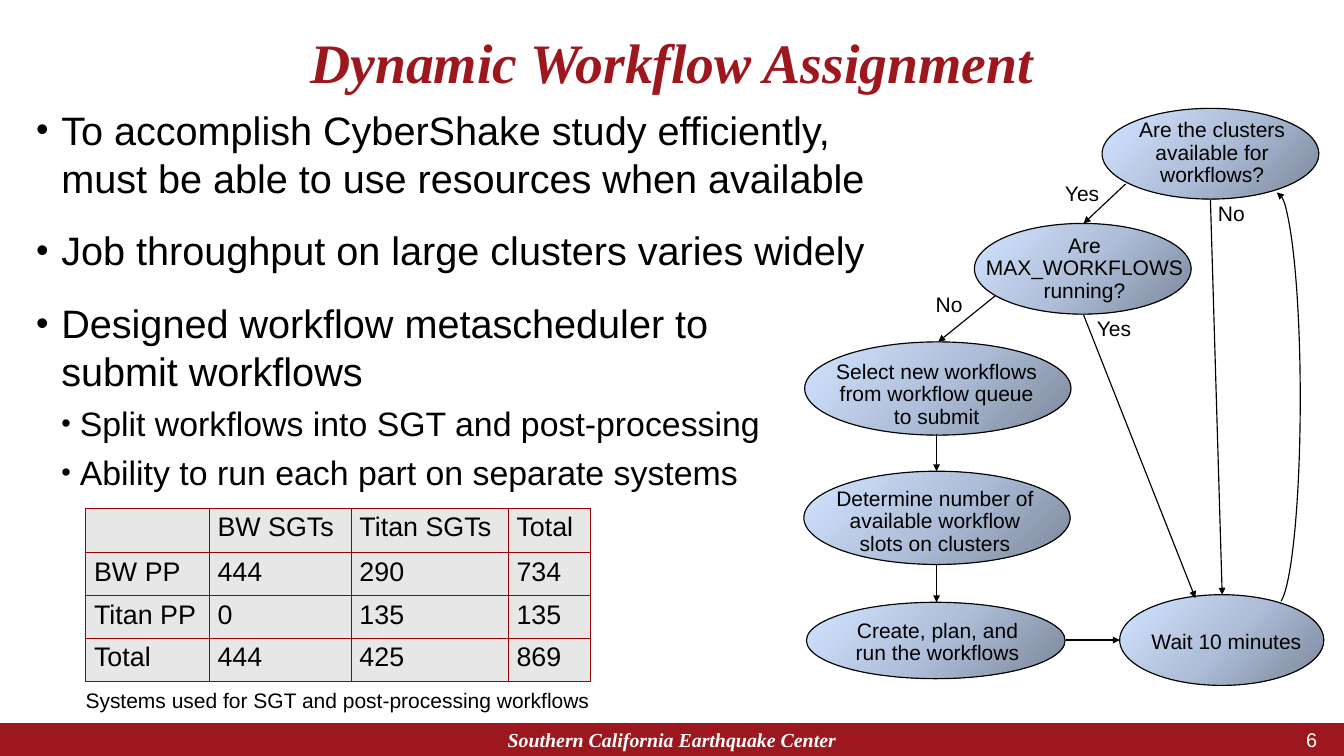
from lxml.etree import SubElement
from pptx import Presentation
from pptx.dml.color import RGBColor
from pptx.enum.shapes import MSO_CONNECTOR, MSO_SHAPE
from pptx.enum.text import MSO_ANCHOR, PP_ALIGN
from pptx.oxml import parse_xml
from pptx.oxml.ns import nsdecls, qn
from pptx.util import Inches, Pt

# Content; places are columns and rows of a 16 by 9 grid
COLUMNS, ROWS = 16, 9
COLORS = {"red": "9D171E", "black": "000000", "white": "FFFFFF",
          "cell": "E7E7E7", "border": "990000"}
GRADIENT = [(0, "7B8699"), (50, "AFBFDA"), (100, "D2E4FF")]
TITLE = "Dynamic Workflow Assignment"
BULLETS = [
    (0, "To accomplish CyberShake study efficiently, must be able to use resources when available"),
    (0, "Job throughput on large clusters varies widely"),
    (0, "Designed workflow metascheduler to\vsubmit workflows"),
    (1, "Split workflows into SGT and post-processing"),
    (1, "Ability to run each part on separate systems"),
]
# Bullet level: size, space before, left margin, hanging indent, bullet percent
LEVELS = [(34, 21.6, 0.31, 0.3, 90), (29, 7.2, 0.53, 0.22, 80)]
# Flow step: ellipse, label box, label
STEPS = [
    ((13.12, 1.29, 2.58, 1.08), (13.1, 1.37, 2.66, 0.92), "Are the clusters available for workflows?"),
    ((11.6, 2.66, 2.58, 1.08), (11.58, 2.75, 2.66, 0.92), "Are MAX_WORKFLOWS running?"),
    ((9.58, 4.07, 3.17, 1.11), (9.83, 4.25, 2.64, 0.92), "Select new workflows from workflow queue to submit"),
    ((9.57, 5.61, 3.17, 1.11), (9.81, 5.76, 2.64, 0.92), "Determine number of available workflow slots on clusters"),
    ((9.6, 7.17, 3.08, 0.91), (10, 7.33, 2.32, 0.65), "Create, plan, and run the workflows"),
    ((13.33, 7.08, 2.43, 1.08), (13.6, 7.47, 2, 0.37), "Wait 10 minutes"),
]
ARROWS = [
    (13.4, 2.19, 12.9, 2.66), (14.41, 2.38, 14.55, 7.08),
    (11.85, 3.52, 11.17, 4.07), (12.9, 3.75, 14.23, 7.12),
    (11.15, 5.17, 11.15, 5.61), (11.15, 6.73, 11.15, 7.17),
    (12.69, 7.62, 13.33, 7.62),
]
RETURN_ARC = (14.92, 2.29, 0.56, 4.91)
ANSWERS = [(12.58, 2.13, "Yes"), (14.4, 2.37, "No"),
           (11.04, 3.46, "No"), (12.96, 3.74, "Yes")]
TABLE_ROWS = [
    ("", "BW SGTs", "Titan SGTs", "Total"),
    ("BW PP", "444", "290", "734"),
    ("Titan PP", "0", "135", "135"),
    ("Total", "444", "425", "869"),
]
TABLE_WIDTHS = [1.47, 1.69, 1.87, 0.98]
TABLE_HEIGHTS = [0.53, 0.51, 0.51, 0.51]
CAPTION = "Systems used for SGT and post-processing workflows"

presentation = Presentation()
presentation.slide_width, presentation.slide_height = Inches(COLUMNS), Inches(ROWS)
slide = presentation.slides.add_slide(presentation.slide_layouts[6])
shapes = slide.shapes


def place(box):
    return [Inches(value) for value in box]


def color(name):
    return RGBColor.from_string(COLORS[name])


def style(paragraph, size, ink="black", name="Arial", strong=False):
    for run in paragraph.runs:
        font = run.font
        font.size, font.name = Pt(size), name
        font.bold = font.italic = strong
        font.color.rgb = color(ink)


def add_text(box, text, size=18, align=PP_ALIGN.LEFT, spacing=0.9,
             anchor=MSO_ANCHOR.TOP, margins=(0.1, 0.05), **look):
    frame = shapes.add_textbox(*place(box)).text_frame
    frame.word_wrap = True
    frame.vertical_anchor = anchor
    frame.margin_left = frame.margin_right = Inches(margins[0])
    frame.margin_top = frame.margin_bottom = Inches(margins[1])
    frame.text = text
    for paragraph in frame.paragraphs:
        paragraph.alignment, paragraph.line_spacing = align, spacing
        style(paragraph, size, **look)
    return frame


def add_outline(shape, arrow_end=None):
    shape.line.color.rgb = color("black")
    shape.line.width = Pt(1)
    if arrow_end:
        SubElement(shape.line._get_or_add_ln(), qn(f"a:{arrow_end}"), type="triangle")


def add_ellipse(box):
    ellipse = shapes.add_shape(MSO_SHAPE.OVAL, *place(box))
    add_outline(ellipse)
    ellipse.shadow.inherit = False
    stops = "".join(f'<a:gs pos="{share * 1000}"><a:srgbClr val="{shade}"/></a:gs>'
                    for share, shade in GRADIENT)
    gradient = parse_xml(
        f'<a:gradFill {nsdecls("a")} rotWithShape="1"><a:gsLst>{stops}</a:gsLst>'
        '<a:path path="circle"><a:fillToRect l="100000" t="100000"/></a:path></a:gradFill>')
    ellipse._element.spPr.find(qn("a:prstGeom")).addnext(gradient)


# Title and footer
wide = (0.12, 0.06)
serif = {"name": "Times New Roman", "strong": True}
footer = shapes.add_shape(MSO_SHAPE.RECTANGLE, *place((0, 8.61, COLUMNS, 0.39)))
footer.shadow.inherit = False
footer.fill.solid()
footer.fill.fore_color.rgb = color("red")
footer.line.fill.background()
add_text((0.4, 0.36, 15.2, 0.84), TITLE, 47.7, PP_ALIGN.CENTER,
         margins=wide, ink="red", **serif)
add_text((5.3, 8.57, 5.4, 0.48), "Southern California Earthquake Center", 17,
         PP_ALIGN.CENTER, 1, MSO_ANCHOR.MIDDLE, wide, ink="white", **serif)
add_text((14.3, 8.69, 1.5, 0.24), "6", 17, PP_ALIGN.RIGHT, 1,
         MSO_ANCHOR.MIDDLE, wide, ink="white")

# Bullets
body = add_text((0.3, 1.2, 10.22, 7.1), "", spacing=1, margins=wide)
for index, (level, text) in enumerate(BULLETS):
    size, before, left, hanging, percent = LEVELS[level]
    paragraph = body.add_paragraph() if index else body.paragraphs[0]
    paragraph.text = text
    paragraph.level = level
    paragraph.space_before = Pt(before if index else 0)
    properties = paragraph._p.get_or_add_pPr()
    properties.set("marL", str(Inches(left)))
    properties.set("indent", str(-Inches(hanging)))
    bullet_color = SubElement(properties, qn("a:buClr"))
    SubElement(bullet_color, qn("a:srgbClr"), val=COLORS["black"])
    SubElement(properties, qn("a:buSzPct"), val=str(percent * 1000))
    SubElement(properties, qn("a:buFont"), typeface="Arial")
    SubElement(properties, qn("a:buChar"), char="•")
    style(paragraph, size)

# Flow chart
for ellipse_box, label_box, label in STEPS:
    add_ellipse(ellipse_box)
    add_text(label_box, label, align=PP_ALIGN.CENTER)
for ends in ARROWS:
    arrow = shapes.add_connector(MSO_CONNECTOR.STRAIGHT, *place(ends))
    add_outline(arrow, "tailEnd")
    SubElement(arrow._element.spPr, qn("a:effectLst"))
arc = shapes.add_shape(MSO_SHAPE.ARC, *place(RETURN_ARC))
arc.adjustments[0], arc.adjustments[1] = 162, 53.27
arc.fill.background()
add_outline(arc, "headEnd")
arc.shadow.inherit = False
for left, top, answer in ANSWERS:
    add_text((left, top, 0.69, 0.37), answer)

# Table and caption
table_box = (1.02, 6.05, sum(TABLE_WIDTHS), sum(TABLE_HEIGHTS))
table = shapes.add_table(len(TABLE_ROWS), len(TABLE_WIDTHS), *place(table_box)).table
for column, width in zip(table.columns, TABLE_WIDTHS):
    column.width = Inches(width)
for row, height, texts in zip(table.rows, TABLE_HEIGHTS, TABLE_ROWS):
    row.height = Inches(height)
    for cell, text in zip(row.cells, texts):
        cell.text = text
        style(cell.text_frame.paragraphs[0], 23)
        properties = cell._tc.get_or_add_tcPr()
        for side in ("lnL", "lnR", "lnT", "lnB"):
            border = SubElement(properties, qn(f"a:{side}"), w=str(Pt(1)))
            solid = SubElement(border, qn("a:solidFill"))
            SubElement(solid, qn("a:srgbClr"), val=COLORS["border"])
        cell.fill.solid()
        cell.fill.fore_color.rgb = color("cell")
add_text((0.92, 8.17, 6.27, 0.37), CAPTION)

presentation.save("out.pptx")
